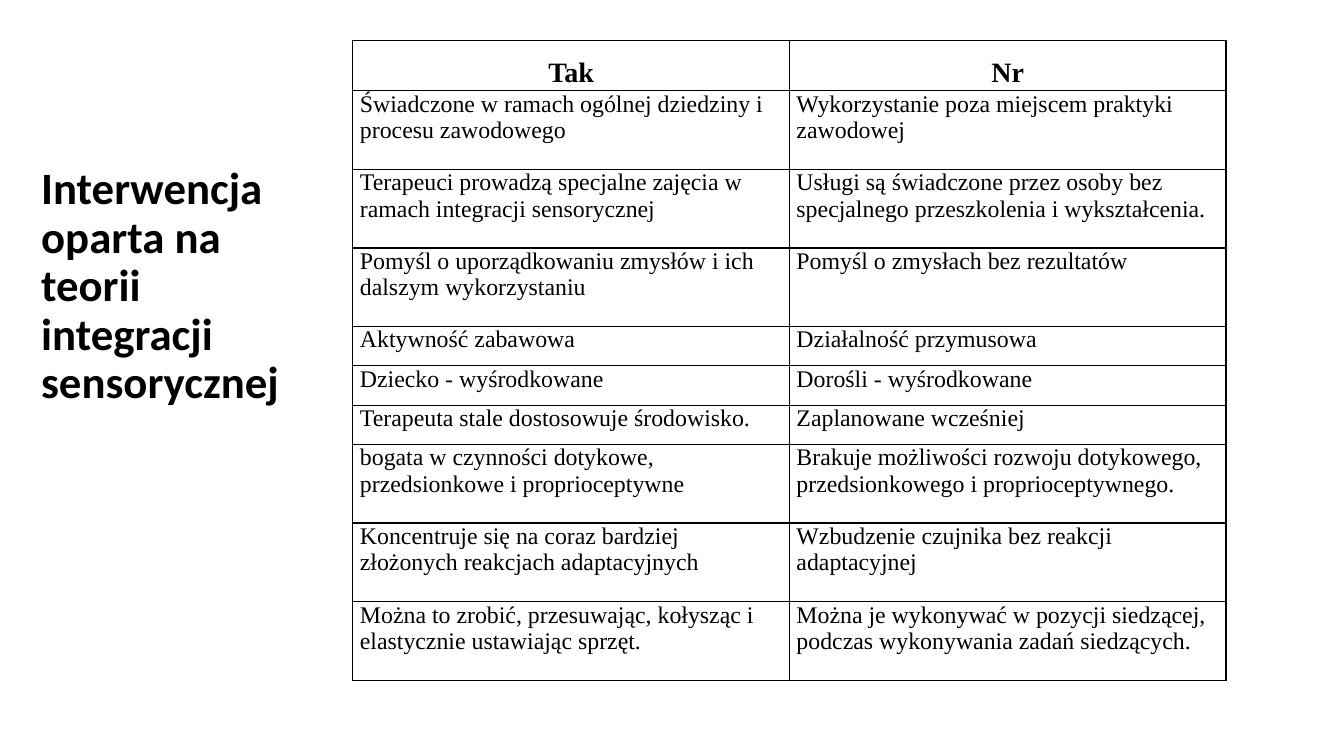
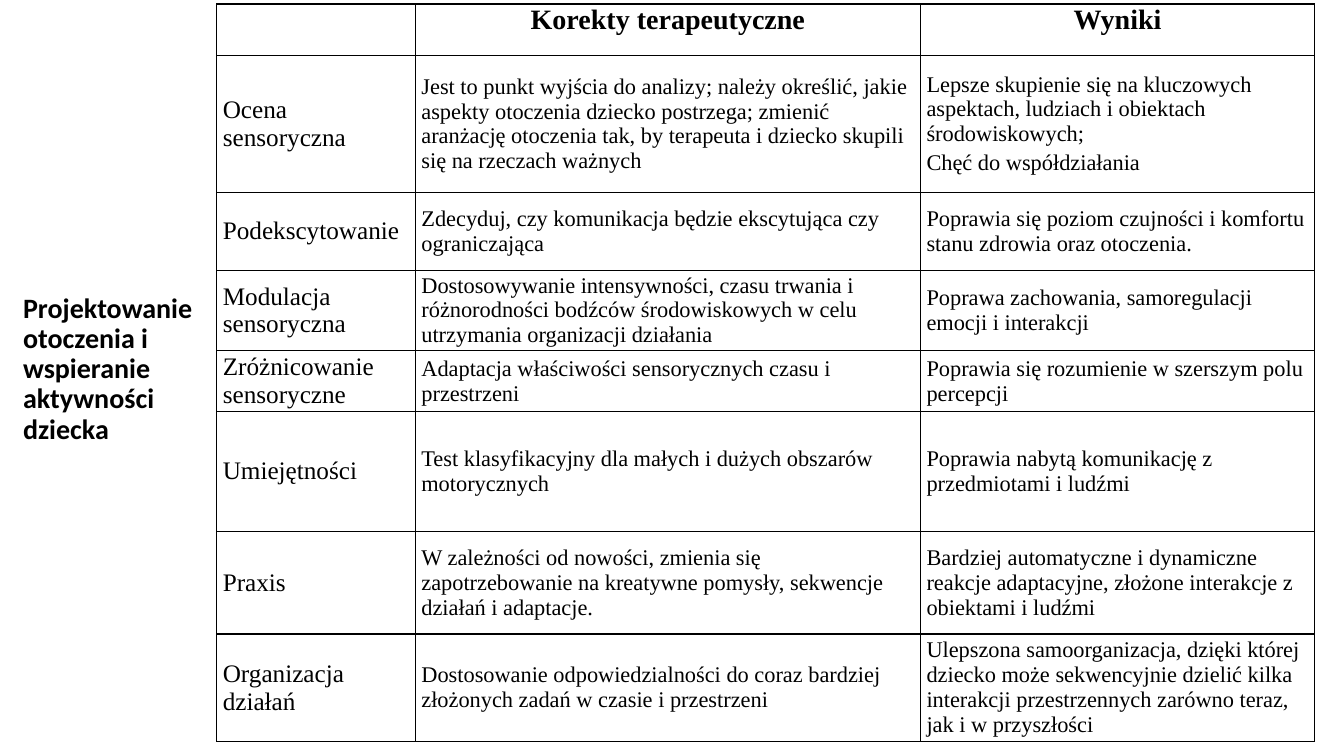
from dataclasses import dataclass

from lxml import etree
from pptx import Presentation
from pptx.dml.color import RGBColor
from pptx.enum import text
from pptx.oxml import ns
from pptx.util import Inches, Pt

BLACK = RGBColor(0x00, 0x00, 0x00)
WHITE = RGBColor(0xFF, 0xFF, 0xFF)
TITLE_FONT = "Calibri"
TABLE_FONT = "Times New Roman"
HEADER_SIZE = 20
MIDDLE = text.MSO_ANCHOR.MIDDLE
TOP = text.MSO_ANCHOR.TOP


@dataclass(frozen=True)
class Box:
    left: float
    top: float
    width: float
    height: float


@dataclass(frozen=True)
class TableSlide:
    """A title at the left and a ruled table at the right; sizes are per column."""
    title: str
    title_size: int
    title_box: Box
    table_left: float
    table_top: float
    columns: list[float]
    heights: list[float]
    rows: list[list[str]]
    sizes: list[int]
    side_margin: float
    header_anchor: text.MSO_ANCHOR
    header_spacing: float
    body_anchor: text.MSO_ANCHOR


THERAPY = TableSlide(
    title="Interwencja oparta na teorii integracji sensorycznej",
    title_size=32,
    title_box=Box(0.31, 0.4, 2.67, 4.9),
    table_left=3.5,
    table_top=0.4,
    columns=[4.33] * 2,
    heights=[0.39] + [0.78] * 3 + [0.39] * 3 + [0.78] * 3,
    rows=[
        ["Tak", "Nr"],
        ["Świadczone w ramach ogólnej dziedziny i procesu zawodowego",
         "Wykorzystanie poza miejscem praktyki zawodowej"],
        ["Terapeuci prowadzą specjalne zajęcia w ramach integracji sensorycznej",
         "Usługi są świadczone przez osoby bez specjalnego przeszkolenia i wykształcenia."],
        ["Pomyśl o uporządkowaniu zmysłów i ich dalszym wykorzystaniu",
         "Pomyśl o zmysłach bez rezultatów"],
        ["Aktywność zabawowa", "Działalność przymusowa"],
        ["Dziecko - wyśrodkowane", "Dorośli - wyśrodkowane"],
        ["Terapeuta stale dostosowuje środowisko.", "Zaplanowane wcześniej"],
        ["bogata w czynności dotykowe, przedsionkowe i proprioceptywne",
         "Brakuje możliwości rozwoju dotykowego, przedsionkowego i proprioceptywnego."],
        ["Koncentruje się na coraz bardziej złożonych reakcjach adaptacyjnych",
         "Wzbudzenie czujnika bez reakcji adaptacyjnej"],
        ["Można to zrobić, przesuwając, kołysząc i elastycznie ustawiając sprzęt.",
         "Można je wykonywać w pozycji siedzącej, podczas wykonywania zadań siedzących."],
    ],
    sizes=[17, 17],
    side_margin=0.07,
    header_anchor=MIDDLE,
    header_spacing=1.5,
    body_anchor=TOP,
)

ENVIRONMENT = TableSlide(
    title="Projektowanie otoczenia i wspieranie aktywności dziecka",
    title_size=20,
    title_box=Box(0.13, 0.89, 2.02, 5.55),
    table_left=2.15,
    table_top=0.04,
    columns=[1.97, 5.01, 3.91],
    heights=[0.51, 1.36, 0.77, 0.77, 0.51, 1.19, 1.02, 1.02],
    rows=[
        ["", "Korekty terapeutyczne", "Wyniki"],
        ["Ocena sensoryczna",
         "Jest to punkt wyjścia do analizy; należy określić, jakie aspekty otoczenia dziecko "
         "postrzega; zmienić aranżację otoczenia tak, by terapeuta i dziecko skupili się na "
         "rzeczach ważnych",
         "Lepsze skupienie się na kluczowych aspektach, ludziach i obiektach środowiskowych;\n"
         "Chęć do współdziałania"],
        ["Podekscytowanie",
         "Zdecyduj, czy komunikacja będzie ekscytująca czy ograniczająca",
         "Poprawia się poziom czujności i komfortu stanu zdrowia oraz otoczenia."],
        ["Modulacja sensoryczna",
         "Dostosowywanie intensywności, czasu trwania i różnorodności bodźców środowiskowych "
         "w celu utrzymania organizacji działania",
         "Poprawa zachowania, samoregulacji emocji i interakcji"],
        ["Zróżnicowanie sensoryczne",
         "Adaptacja właściwości sensorycznych czasu i przestrzeni",
         "Poprawia się rozumienie w szerszym polu percepcji"],
        ["Umiejętności",
         "Test klasyfikacyjny dla małych i dużych obszarów motorycznych",
         "Poprawia nabytą komunikację z przedmiotami i ludźmi"],
        ["Praxis",
         "W zależności od nowości, zmienia się zapotrzebowanie na kreatywne pomysły, "
         "sekwencje działań i adaptacje.",
         "Bardziej automatyczne i dynamiczne reakcje adaptacyjne, złożone interakcje "
         "z obiektami i ludźmi"],
        ["Organizacja działań",
         "Dostosowanie odpowiedzialności do coraz bardziej złożonych zadań w czasie i przestrzeni",
         "Ulepszona samoorganizacja, dzięki której dziecko może sekwencyjnie dzielić kilka "
         "interakcji przestrzennych zarówno teraz, jak i w przyszłości"],
    ],
    sizes=[18, 16, 16],
    side_margin=0.06,
    header_anchor=TOP,
    header_spacing=1.0,
    body_anchor=MIDDLE,
)


def write(frame, content: str, *, font: str, size: float, bold: bool = False,
          align=text.PP_ALIGN.LEFT, line_spacing: float = 1.0, gap: float = 0) -> None:
    """Fill a text frame, one paragraph for each line of content."""
    frame.text = content
    for paragraph in frame.paragraphs:
        paragraph.alignment = align
        paragraph.line_spacing = line_spacing
        paragraph.space_before = paragraph.space_after = Pt(gap)
        for run in paragraph.runs:
            run.font.name = font
            run.font.size = Pt(size)
            run.font.bold = bold
            run.font.color.rgb = BLACK


def add_borders(cell, width: float = 1) -> None:
    properties = cell._tc.get_or_add_tcPr()
    for index, side in enumerate(("lnL", "lnR", "lnT", "lnB")):
        line = etree.Element(ns.qn(f"a:{side}"), w=str(Pt(width)))
        fill = etree.SubElement(line, ns.qn("a:solidFill"))
        etree.SubElement(fill, ns.qn("a:srgbClr"), val=str(BLACK))
        properties.insert(index, line)


def add_title(slide, content: TableSlide) -> None:
    box = content.title_box
    shape = slide.shapes.add_textbox(
        Inches(box.left), Inches(box.top), Inches(box.width), Inches(box.height))
    frame = shape.text_frame
    frame.word_wrap = True
    frame.vertical_anchor = MIDDLE
    write(frame, content.title, font=TITLE_FONT, size=content.title_size,
          bold=True, line_spacing=0.9)


def add_ruled_table(slide, content: TableSlide) -> None:
    table = slide.shapes.add_table(
        len(content.rows), len(content.columns),
        Inches(content.table_left), Inches(content.table_top),
        Inches(sum(content.columns)), Inches(sum(content.heights))).table
    table.first_row = table.horz_banding = False
    for column, width in zip(table.columns, content.columns):
        column.width = Inches(width)
    for row, height in zip(table.rows, content.heights):
        row.height = Inches(height)
    for row_index, values in enumerate(content.rows):
        header = row_index == 0
        for column_index, value in enumerate(values):
            cell = table.cell(row_index, column_index)
            cell.fill.solid()
            cell.fill.fore_color.rgb = WHITE
            add_borders(cell)
            cell.margin_left = cell.margin_right = Inches(content.side_margin)
            cell.margin_top = cell.margin_bottom = 0
            cell.vertical_anchor = content.header_anchor if header else content.body_anchor
            write(cell.text_frame, value, font=TABLE_FONT, bold=header, gap=1.5,
                  size=HEADER_SIZE if header else content.sizes[column_index],
                  align=text.PP_ALIGN.CENTER if header else text.PP_ALIGN.LEFT,
                  line_spacing=content.header_spacing if header else 1.0)


def main() -> None:
    presentation = Presentation()
    presentation.slide_width = Inches(13.33)
    presentation.slide_height = Inches(7.5)
    for content in (THERAPY, ENVIRONMENT):
        slide = presentation.slides.add_slide(presentation.slide_layouts[6])
        add_title(slide, content)
        add_ruled_table(slide, content)
    presentation.save("out.pptx")


if __name__ == "__main__":
    main()
